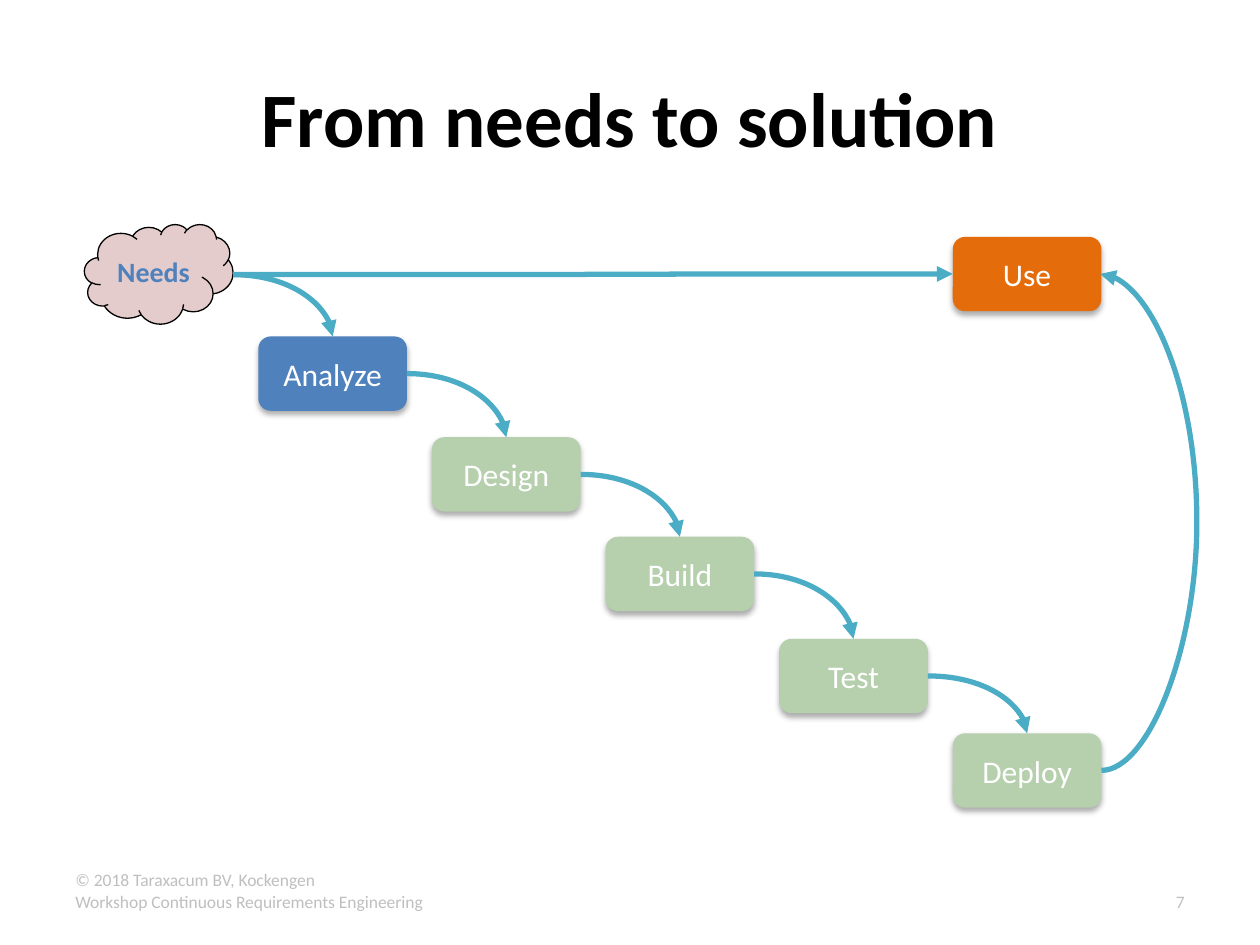
from lxml import etree
from pptx import Presentation
from pptx.dml.color import RGBColor
from pptx.enum.shapes import MSO_CONNECTOR as Connector, MSO_SHAPE as Shape
from pptx.enum.text import MSO_ANCHOR as Anchor, PP_ALIGN as Align
from pptx.oxml.ns import qn
from pptx.util import Inches, Pt

BOX_WIDTH, BOX_HEIGHT = 1.18, 0.59
FIRST_LEFT, STEP_X = 2.05, 1.378
FLOW_Y = 2.18
CLOUD_RIGHT = 1.85
LOOP_BULGE = 0.77
GREEN, BLUE, ORANGE = "B6CFAD", "4F81BD", "E46C0A"
STEPS = [
    ("Analyze", 2.67, BLUE),
    ("Design", 3.47, GREEN),
    ("Build", 4.26, GREEN),
    ("Test", 5.07, GREEN),
    ("Deploy", 5.82, GREEN),
]


def color(value):
    return RGBColor.from_string(value)


def add_xml(parent, tag, **attributes):
    values = {name: str(value) for name, value in attributes.items()}
    return etree.SubElement(parent, qn(tag), values)


class FlowSlide:
    font_name = "Calibri"
    arrow_color = "4BACC6"
    arrow_width = 3

    def __init__(self, presentation):
        self.slide = presentation.slides.add_slide(presentation.slide_layouts[6])

    def label(self, shape, text, size, text_color, bold=False,
              align=Align.LEFT, **frame_format):
        frame = shape.text_frame
        for name, value in {"word_wrap": True, **frame_format}.items():
            setattr(frame, name, value)
        paragraph = frame.paragraphs[0]
        paragraph.text = text
        paragraph.alignment = align
        font = paragraph.runs[0].font
        for name, value in {"name": self.font_name, "size": Pt(size), "bold": bold}.items():
            setattr(font, name, value)
        font.color.rgb = color(text_color)

    def text(self, bounds, text, size, text_color, **text_format):
        box = self.slide.shapes.add_textbox(*map(Inches, bounds))
        self.label(box, text, size, text_color, **text_format)

    def shape(self, kind, bounds, fill):
        shape = self.slide.shapes.add_shape(kind, *map(Inches, bounds))
        shape.shadow.inherit = False
        shape.fill.solid()
        shape.fill.fore_color.rgb = color(fill)
        return shape

    def cloud(self, bounds, text):
        cloud = self.shape(Shape.CLOUD, bounds, "800000")
        fill = cloud._element.spPr.find(qn("a:solidFill"))
        add_xml(fill[0], "a:alpha", val=20000)
        cloud.line.color.rgb = color("000000")
        cloud.line.width = Pt(0.75)
        self.label(cloud, text, 16, BLUE, bold=True, align=Align.CENTER,
                   vertical_anchor=Anchor.MIDDLE, margin_left=0, margin_right=0)

    def box(self, left, top, text, fill):
        box = self.shape(Shape.ROUNDED_RECTANGLE, (left, top, BOX_WIDTH, BOX_HEIGHT), fill)
        box.line.fill.background()
        effects = box._element.spPr.find(qn("a:effectLst"))
        shadow = add_xml(effects, "a:outerShdw", blurRad=Pt(3.5), dist=Pt(2.2),
                         dir=5400000, rotWithShape=0)
        shadow_color = add_xml(shadow, "a:srgbClr", val="000000")
        add_xml(shadow_color, "a:alpha", val=32000)
        self.label(box, text, 18, "FFFFFF", align=Align.CENTER,
                   vertical_anchor=Anchor.MIDDLE)

    def arrow(self, start, end, preset="curvedConnector3", bend=None):
        """Draw a curved arrow; bend is the middle's offset as a share of the width."""
        arrow = self.slide.shapes.add_connector(
            Connector.CURVE, *map(Inches, (*start, *end)))
        arrow.line.color.rgb = color(self.arrow_color)
        arrow.line.width = Pt(self.arrow_width)
        properties = arrow._element.spPr
        geometry = properties.find(qn("a:prstGeom"))
        geometry.set("prst", preset)
        if bend is not None:
            guides = geometry.find(qn("a:avLst"))
            if guides is None:
                guides = add_xml(geometry, "a:avLst")
            add_xml(guides, "a:gd", name="adj1", fmla=f"val {round(bend * 100000)}")
        add_xml(properties.find(qn("a:ln")), "a:tailEnd", type="triangle")
        add_xml(properties, "a:effectLst")


def main():
    presentation = Presentation()
    presentation.slide_width = Inches(10)
    presentation.slide_height = Inches(7.5)
    flow = FlowSlide(presentation)

    flow.text((0.5, 0.3, 9, 1.25), "From needs to solution", 44, "000000", bold=True,
              align=Align.CENTER, vertical_anchor=Anchor.MIDDLE)
    flow.text((0.5, 6.9, 2.3, 0.12), "© 2018 Taraxacum BV, Kockengen", 10, "BFBFBF",
              margin_top=0, margin_bottom=0)
    flow.text((0.5, 7.02, 8, 0.4), "Workshop Continuous Requirements Engineering",
              10, "BFBFBF")
    flow.text((8.52, 7.02, 0.98, 0.4), "7", 10, "BFBFBF", align=Align.RIGHT)

    flow.cloud((0.67, 1.78, 1.18, 0.79), "Needs")
    exit_point = (CLOUD_RIGHT, FLOW_Y)
    for index, (name, top, fill) in enumerate(STEPS):
        left = FIRST_LEFT + index * STEP_X
        flow.box(left, top, name, fill)
        flow.arrow(exit_point, (left + BOX_WIDTH / 2, top), "curvedConnector2")
        exit_point = (left + BOX_WIDTH, top + BOX_HEIGHT / 2)

    use_left, use_top = left, 1.88
    use_middle = use_top + BOX_HEIGHT / 2
    flow.box(use_left, use_top, "Use", ORANGE)
    loop_width = 0.01
    flow.arrow(exit_point, (exit_point[0] - loop_width, use_middle),
               bend=-LOOP_BULGE / loop_width)
    flow.arrow((CLOUD_RIGHT, FLOW_Y), (use_left, use_middle))

    presentation.save("out.pptx")


if __name__ == "__main__":
    main()
